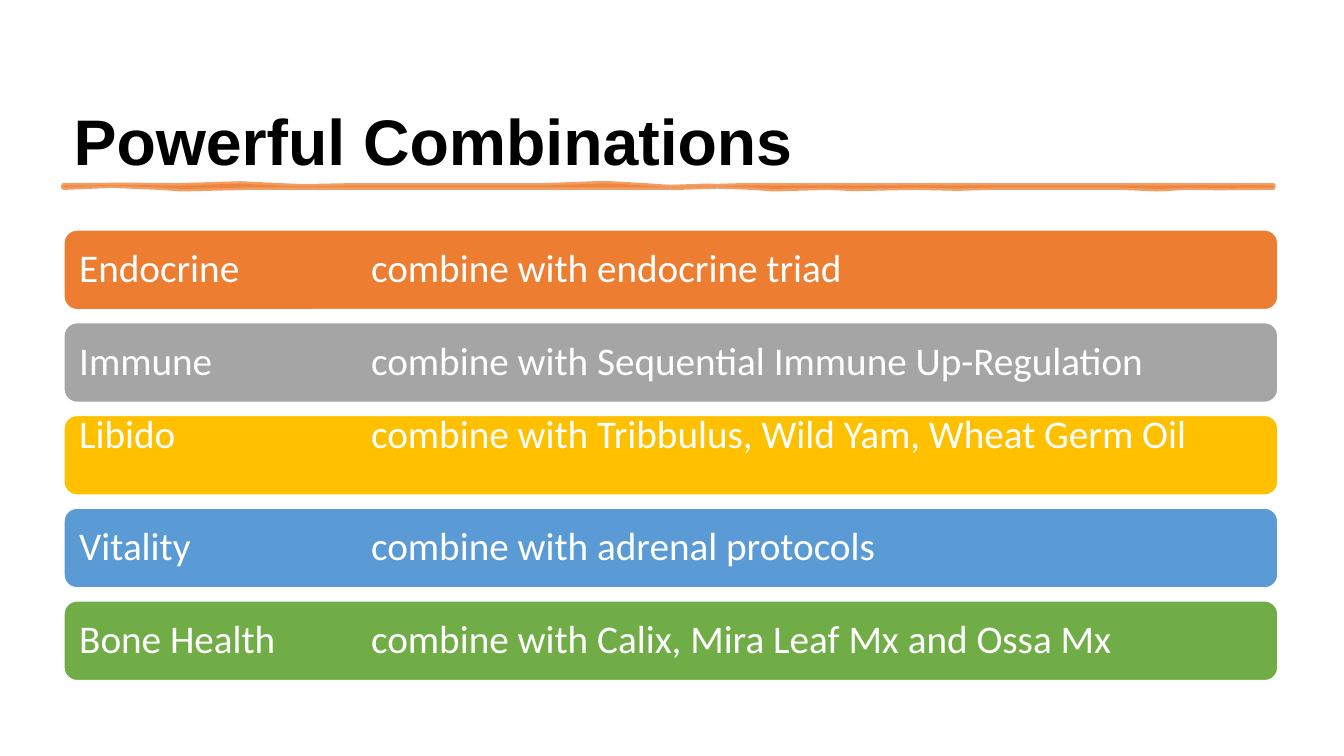
from lxml import etree
from pptx import Presentation, util as u
from pptx.dml.color import RGBColor
from pptx.enum import shapes, text
from pptx.oxml.ns import qn

Pt = u.Pt


def paint(color_format, hex_color):
    color_format.solid()
    color_format.fore_color.rgb = RGBColor.from_string(hex_color)


deck = Presentation()
deck.slide_width, deck.slide_height = Pt(960), Pt(540)
slide = deck.slides.add_slide(deck.slide_layouts[5])

# Heading
heading = slide.shapes.title
heading.left, heading.top, heading.width, heading.height = Pt(45.4), Pt(30.2), Pt(867.6), Pt(101.5)
heading_frame = heading.text_frame
heading_frame.auto_size = text.MSO_AUTO_SIZE.NONE
heading_frame.word_wrap = True
heading_frame.vertical_anchor = text.MSO_ANCHOR.BOTTOM
heading_line = heading_frame.paragraphs[0]
heading_line.alignment = text.PP_ALIGN.LEFT
heading_line.line_spacing = 0.9
heading_run = heading_line.add_run()
heading_run.text = "Powerful Combinations"
heading_run.font.name = "Arial"
heading_run.font.size = Pt(46)
heading_run.font.bold = True
paint(heading_run.font.fill, "000000")

# Hand-drawn rule: upper edge rightwards, lower edge back
upper_edge = [(45.4, 132.5), (90, 132.2), (127, 132.5), (172, 131.2), (199, 132.5),
              (216, 133.2), (253, 132.5), (389, 132.5), (432, 130.9), (460, 132.5),
              (482, 134), (531, 132.5), (909.4, 132.5)]
lower_edge = [(909.4, 133.9), (870, 134.2), (847, 133.9), (828, 135), (800, 133.9),
              (708, 133.9), (684, 134.6), (654, 133.9), (610, 134.8), (592, 133.9),
              (552, 135), (538, 133.9), (505, 132.8), (475, 133.9), (177, 133.9),
              (130, 135), (114, 133.9), (80, 132.5), (45.4, 133.9)]
outline = [(Pt(x), Pt(y)) for x, y in upper_edge + lower_edge]
builder = slide.shapes.build_freeform(*outline[0])
builder.add_line_segments(outline[1:], close=True)
rule = builder.convert_to_shape()
rule.shadow.inherit = False
paint(rule.fill, "ED7D31")
paint(rule.line.fill, "ED7D31")
rule.line.width = Pt(3.5)
for rule_color in rule._element.spPr.iter(qn("a:srgbClr")):
    etree.SubElement(rule_color, qn("a:alpha"), val="75000")

# Combination bars: area, partner, colour, text shift, line spacing
combinations = [
    ("Endocrine", "combine with endocrine triad", "ED7D31", 0, 0.9),
    ("Immune", "combine with Sequential Immune Up-Regulation", "A5A5A5", 0, 0.9),
    ("Libido", "combine with Tribbulus, Wild Yam, Wheat Germ Oil", "FFC000", -16, 1),
    ("Vitality", "combine with adrenal protocols", "5B9BD5", 0, 0.9),
    ("Bone Health", "combine with Calix, Mira Leaf Mx and Ossa Mx", "70AD47", 0, 0.9),
]
bar_top, bar_pitch, bar_height = 164, 66.24, 57.5
for row, (area, partner, color, shift, spacing) in enumerate(combinations):
    top = bar_top + row * bar_pitch
    bar = slide.shapes.add_shape(shapes.MSO_SHAPE.ROUNDED_RECTANGLE,
                                 Pt(45.4), Pt(top), Pt(867.6), Pt(bar_height))
    bar.shadow.inherit = False
    paint(bar.fill, color)
    paint(bar.line.fill, "FFFFFF")
    bar.line.width = Pt(1.5)

    caption = slide.shapes.add_textbox(Pt(48.2), Pt(top + shift), Pt(862), Pt(bar_height))
    frame = caption.text_frame
    frame.word_wrap = True
    frame.vertical_anchor = text.MSO_ANCHOR.MIDDLE
    frame.margin_left = frame.margin_right = Pt(8.4)
    frame.margin_top = frame.margin_bottom = Pt(8.4)
    line = frame.paragraphs[0]
    line.line_spacing = spacing
    tabs = etree.SubElement(line._p.get_or_add_pPr(), qn("a:tabLst"))
    etree.SubElement(tabs, qn("a:tab"), pos=str(Pt(208.5)), algn="l")
    run = line.add_run()
    run.text = f"{area}\t{partner}"
    run.font.name = "Calibri"
    run.font.size = Pt(28)
    paint(run.font.fill, "FFFFFF")

deck.save("out.pptx")
